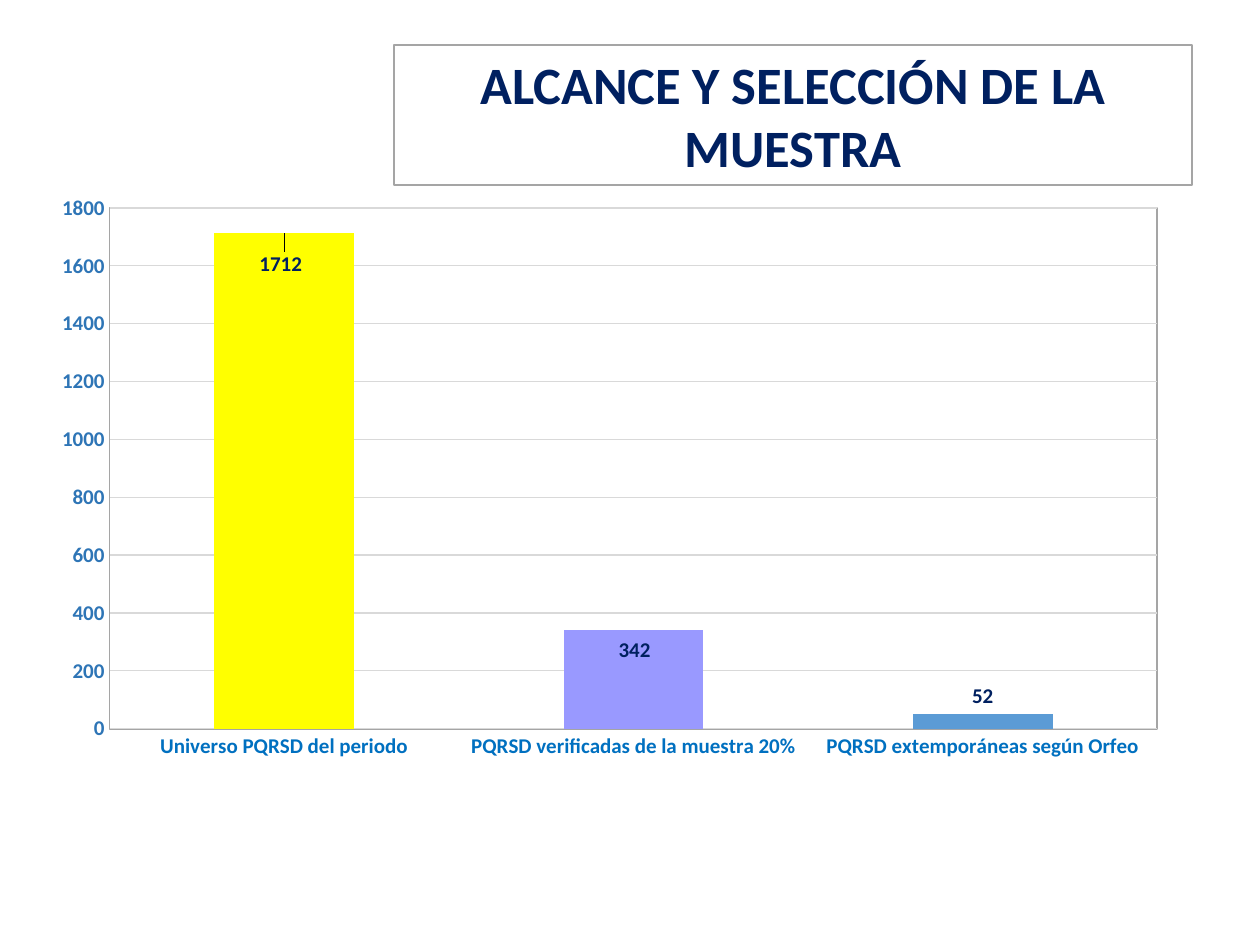
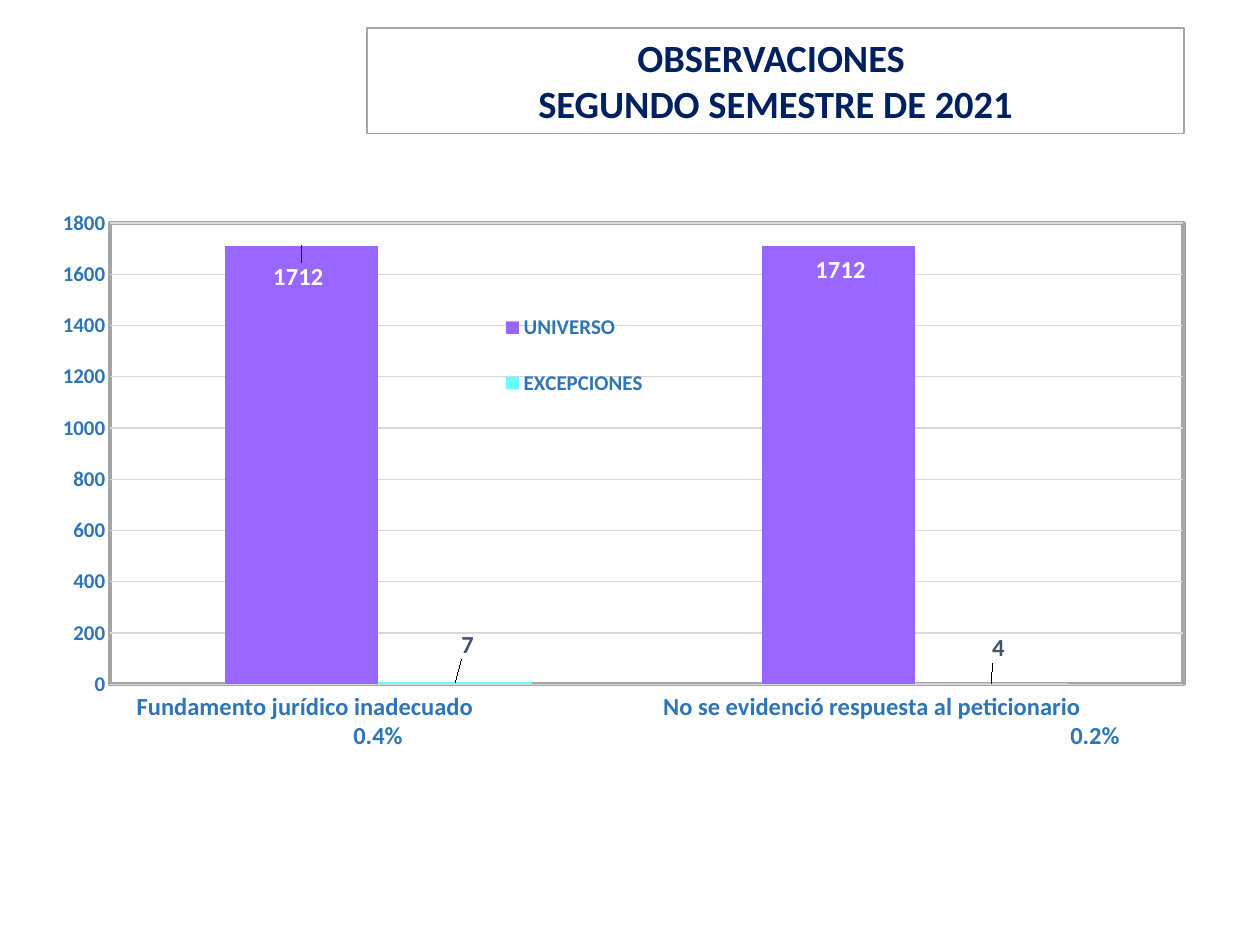
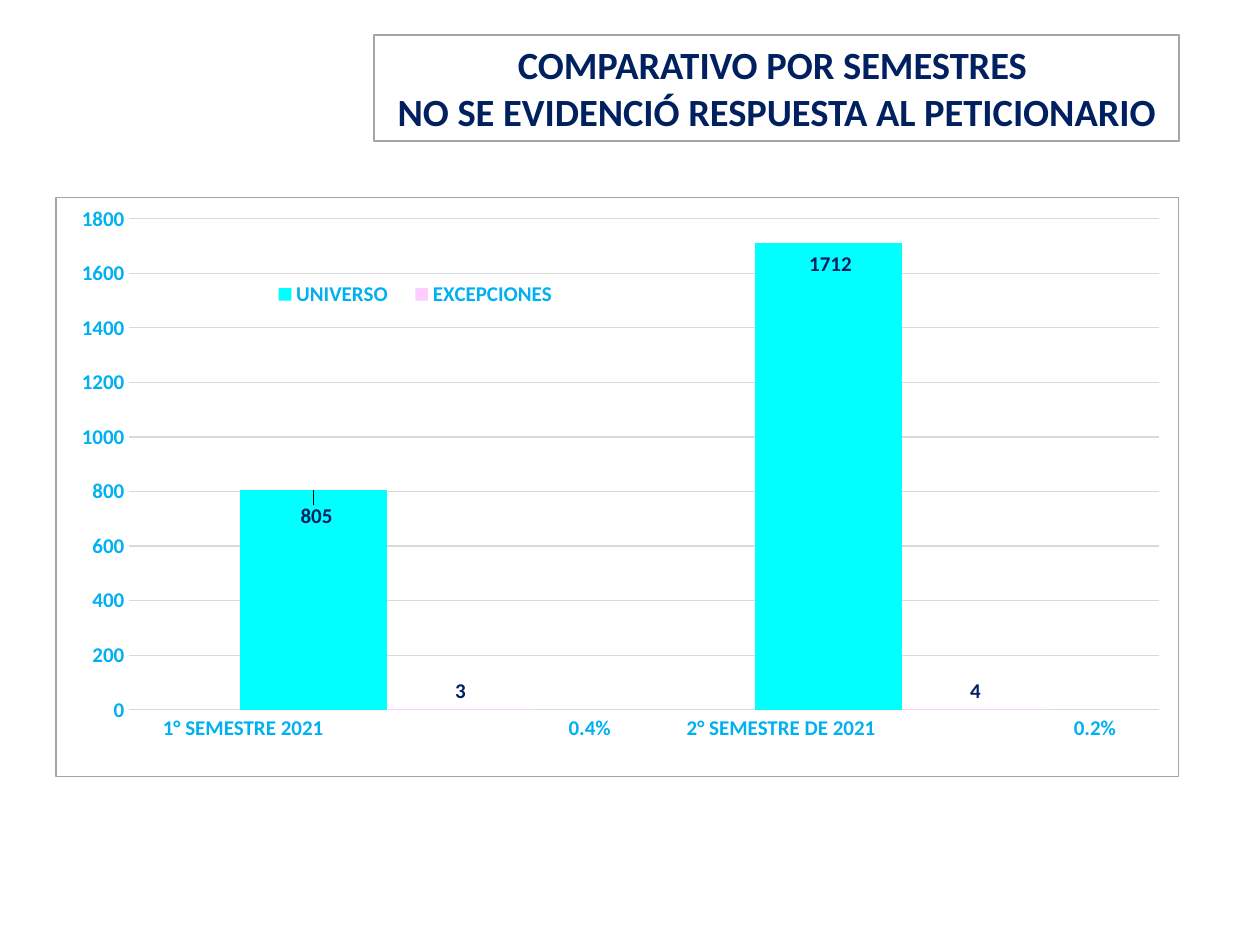
from dataclasses import dataclass

from lxml import etree
from pptx import Presentation
from pptx.chart.data import CategoryChartData
from pptx.dml.color import RGBColor
from pptx.enum.chart import (XL_CHART_TYPE, XL_LABEL_POSITION, XL_LEGEND_POSITION,
                             XL_TICK_LABEL_POSITION, XL_TICK_MARK)
from pptx.enum.shapes import MSO_SHAPE
from pptx.enum.text import MSO_ANCHOR, PP_ALIGN
from pptx.oxml import parse_xml
from pptx.util import Inches, Pt


@dataclass(frozen=True)
class Theme:
    font: str = "Calibri"
    navy: str = "002060"
    blue: str = "2E75B6"
    category_blue: str = "0070C0"
    sky: str = "00B0F0"
    slate: str = "44546A"
    white: str = "FFFFFF"
    border: str = "A5A5A5"
    grid: str = "D9D9D9"
    large_title: int = 30
    title: int = 22
    large_label: int = 14
    label: int = 12


THEME = Theme()
NAMESPACES = ('xmlns:c="http://schemas.openxmlformats.org/drawingml/2006/chart" '
              'xmlns:a="http://schemas.openxmlformats.org/drawingml/2006/main"')


@dataclass
class Series:
    name: str
    values: tuple
    color: str
    label_color: str
    label_size: int = THEME.label
    point_colors: tuple = ()
    label_shifts: tuple = ()  # (x, y) as fractions of the chart


@dataclass
class ColumnChart:
    categories: tuple
    series: tuple
    plot_area: tuple
    axis_color: str
    category_color: str
    plot_border: float = 0
    outer_border: float = 0
    legend_area: tuple = ()
    captions: tuple = ()  # (text, centre x, centre y) in inches from the chart corner
    caption_size: int = THEME.label


def style_font(font, size, color):
    font.name = THEME.font
    font.size = Pt(size)
    font.bold = True
    font.color.rgb = RGBColor.from_string(color)


def fill_solid(item, color):
    item.fill.solid()
    item.fill.fore_color.rgb = RGBColor.from_string(color)


def add_line_of_text(para, text, size, color):
    para.alignment = PP_ALIGN.CENTER
    span = para.add_run()
    span.text = text
    style_font(span.font, size, color)


def add_title(page, box, lines, size):
    left, top, width, height = map(Inches, box)
    frame = page.shapes.add_shape(MSO_SHAPE.RECTANGLE, left, top, width, height)
    frame.shadow.inherit = False
    fill_solid(frame, THEME.white)
    frame.line.color.rgb = RGBColor.from_string(THEME.border)
    frame.line.width = Pt(1)
    text = frame.text_frame
    text.word_wrap = True
    text.vertical_anchor = MSO_ANCHOR.TOP
    for number, line in enumerate(lines):
        para = text.add_paragraph() if number else text.paragraphs[0]
        add_line_of_text(para, line, size, THEME.navy)


def add_captions(page, box, chart_info):
    width, height = 4, 0.3
    for text, center_x, center_y in chart_info.captions:
        caption = page.shapes.add_textbox(
            Inches(box[0] + center_x - width / 2), Inches(box[1] + center_y - height / 2),
            Inches(width), Inches(height))
        frame = caption.text_frame
        frame.word_wrap = True
        frame.vertical_anchor = MSO_ANCHOR.MIDDLE
        frame.margin_top = frame.margin_bottom = 0
        add_line_of_text(frame.paragraphs[0], text, chart_info.caption_size,
                         chart_info.category_color)


# Chart XML helpers
def make_layout(position, size=(), edge=False, inner=False):
    parts = ['<c:layoutTarget val="inner"/>'] if inner else []
    if edge:
        parts += ['<c:xMode val="edge"/>', '<c:yMode val="edge"/>']
    parts += [f'<c:{key} val="{value}"/>' for key, value in zip("xywh", (*position, *size))]
    return parse_xml(f'<c:layout {NAMESPACES}><c:manualLayout>{"".join(parts)}'
                     '</c:manualLayout></c:layout>')


def make_frame(width):
    return parse_xml(
        f'<c:spPr {NAMESPACES}><a:solidFill><a:srgbClr val="{THEME.white}"/></a:solidFill>'
        f'<a:ln w="{Pt(width)}"><a:solidFill><a:srgbClr val="{THEME.border}"/></a:solidFill>'
        '</a:ln></c:spPr>')


def place_after_first(parent, layout):
    for old in parent.xpath("./c:layout"):
        parent.remove(old)
    parent.insert(1, layout)


# Chart parts
def style_axes(chart, info):
    values = chart.value_axis
    values.minimum_scale, values.maximum_scale, values.major_unit = 0, 1800, 200
    values.has_major_gridlines = True
    grid = values.major_gridlines.format.line
    grid.color.rgb = RGBColor.from_string(THEME.grid)
    grid.width = Pt(0.75)
    colors = (info.axis_color, info.category_color)
    for axis, color in zip((values, chart.category_axis), colors):
        axis.major_tick_mark = axis.minor_tick_mark = XL_TICK_MARK.NONE
        axis.format.line.fill.background()
        style_font(axis.tick_labels.font, THEME.label, color)
    if info.captions:
        chart.category_axis.tick_label_position = XL_TICK_LABEL_POSITION.NONE


def style_series(chart, number, series, info):
    fill_solid(series.format, info.color)
    series.invert_if_negative = False
    for index, color in enumerate(info.point_colors):
        fill_solid(series.points[index].format, color)
    labels = series.data_labels
    labels.show_value = True
    labels.position = XL_LABEL_POSITION.OUTSIDE_END
    style_font(labels.font, info.label_size, info.label_color)
    for index, shift in enumerate(info.label_shifts):
        label = series.points[index].data_label
        style_font(label.font, info.label_size, info.label_color)
        label.position = XL_LABEL_POSITION.OUTSIDE_END
        element = chart.element.xpath(
            f'.//c:ser[c:idx/@val="{number}"]/c:dLbls/c:dLbl[c:idx/@val="{index}"]')[0]
        place_after_first(element, make_layout(shift))


def style_legend(chart, info):
    chart.has_legend = bool(info.legend_area)
    if not chart.has_legend:
        return
    legend = chart.legend
    legend.position = XL_LEGEND_POSITION.RIGHT
    legend.include_in_layout = False
    style_font(legend.font, THEME.label, info.axis_color)
    element = chart.element.xpath(".//c:legend")[0]
    place_after_first(element, make_layout(info.legend_area[:2], info.legend_area[2:], edge=True))


def add_column_chart(page, box, info):
    data = CategoryChartData()
    data.categories = info.categories
    for series in info.series:
        data.add_series(series.name, series.values)
    chart = page.shapes.add_chart(XL_CHART_TYPE.COLUMN_CLUSTERED, *map(Inches, box), data).chart
    chart.has_title = False
    chart.font.name = THEME.font
    plot = chart.plots[0]
    plot.vary_by_categories = False
    plot.gap_width = 150
    plot.overlap = 0
    style_axes(chart, info)
    for number, (series, details) in enumerate(zip(plot.series, info.series)):
        style_series(chart, number, series, details)
    style_legend(chart, info)

    # Plot position and frames
    area = chart.element.xpath(".//c:plotArea")[0]
    for old in area.xpath("./c:layout"):
        area.remove(old)
    area.insert(0, make_layout(info.plot_area[:2], info.plot_area[2:], edge=True, inner=True))
    if info.plot_border:
        area.append(make_frame(info.plot_border))
    if info.outer_border:
        chart.element.xpath("./c:chart")[0].addnext(make_frame(info.outer_border))
    add_captions(page, box, info)


SAMPLE = ColumnChart(
    categories=("Universo PQRSD del periodo", "PQRSD verificadas de la muestra 20%",
                "PQRSD extemporáneas según Orfeo"),
    series=(Series("Series 1", (1712, 342, 52), "5B9BD5", THEME.navy,
                   point_colors=("FFFF00", "9999FF"),
                   label_shifts=((-0.003, 0.078), (0.001, 0.062))),),
    plot_area=(0.064, 0.037, 0.919, 0.847),
    axis_color=THEME.blue, category_color=THEME.category_blue, plot_border=1)

OBSERVATIONS = ColumnChart(
    categories=("Fundamento jurídico inadecuado", "No se evidenció respuesta al peticionario"),
    series=(Series("UNIVERSO", (1712, 1712), "9966FF", THEME.white, THEME.large_label,
                   label_shifts=((-0.003, 0.088), (0.002, 0.075))),
            Series("EXCEPCIONES", (7, 4), "66FFFF", THEME.slate, THEME.large_label,
                   label_shifts=((0.011, -0.03), (0.006, -0.025)))),
    plot_area=(0.057, 0.045, 0.943, 0.784),
    axis_color=THEME.blue, category_color=THEME.blue, plot_border=2.5,
    legend_area=(0.395, 0.15, 0.14, 0.24),
    captions=(("Fundamento jurídico inadecuado", 2.06, 4.04), ("0.4%", 2.64, 4.27),
              ("No se evidenció respuesta al peticionario", 6.56, 4.04), ("0.2%", 8.33, 4.27)),
    caption_size=THEME.large_label)

COMPARISON = ColumnChart(
    categories=("1° SEMESTRE 2021", "2° SEMESTRE DE 2021"),
    series=(Series("UNIVERSO", (805, 1712), "00FFFF", THEME.navy,
                   label_shifts=((0.003, 0.076), (0.002, 0.067))),
            Series("EXCEPCIONES", (3, 4), "FFCCFF", THEME.navy)),
    plot_area=(0.065, 0.037, 0.918, 0.848),
    axis_color=THEME.sky, category_color=THEME.sky, outer_border=1,
    legend_area=(0.18, 0.14, 0.28, 0.055),
    captions=(("1° SEMESTRE 2021", 1.49, 4.21), ("0.4%", 4.24, 4.21),
              ("2° SEMESTRE DE 2021", 5.76, 4.21), ("0.2%", 8.25, 4.21)))

# Title box, title lines, title size, chart box, chart
PAGES = (
    ((3.13, 0.36, 6.33, 1.11), ("ALCANCE Y SELECCIÓN DE LA MUESTRA",), THEME.large_title,
     (0.29, 1.47, 9.05, 4.88), SAMPLE),
    ((2.91, 0.22, 6.49, 0.84), ("OBSERVACIONES ", "SEGUNDO SEMESTRE DE 2021"), THEME.title,
     (0.36, 1.56, 9.05, 4.67), OBSERVATIONS),
    ((2.97, 0.28, 6.39, 0.84),
     ("COMPARATIVO POR SEMESTRES ", "NO SE EVIDENCIÓ RESPUESTA AL PETICIONARIO"), THEME.title,
     (0.44, 1.56, 8.92, 4.61), COMPARISON),
)


def main():
    deck = Presentation()
    deck.slide_width, deck.slide_height = Inches(10), Inches(7.5)
    for title_box, lines, size, chart_box, chart_info in PAGES:
        page = deck.slides.add_slide(deck.slide_layouts[6])
        add_title(page, title_box, lines, size)
        add_column_chart(page, chart_box, chart_info)
    deck.save("out.pptx")


if __name__ == "__main__":
    main()
